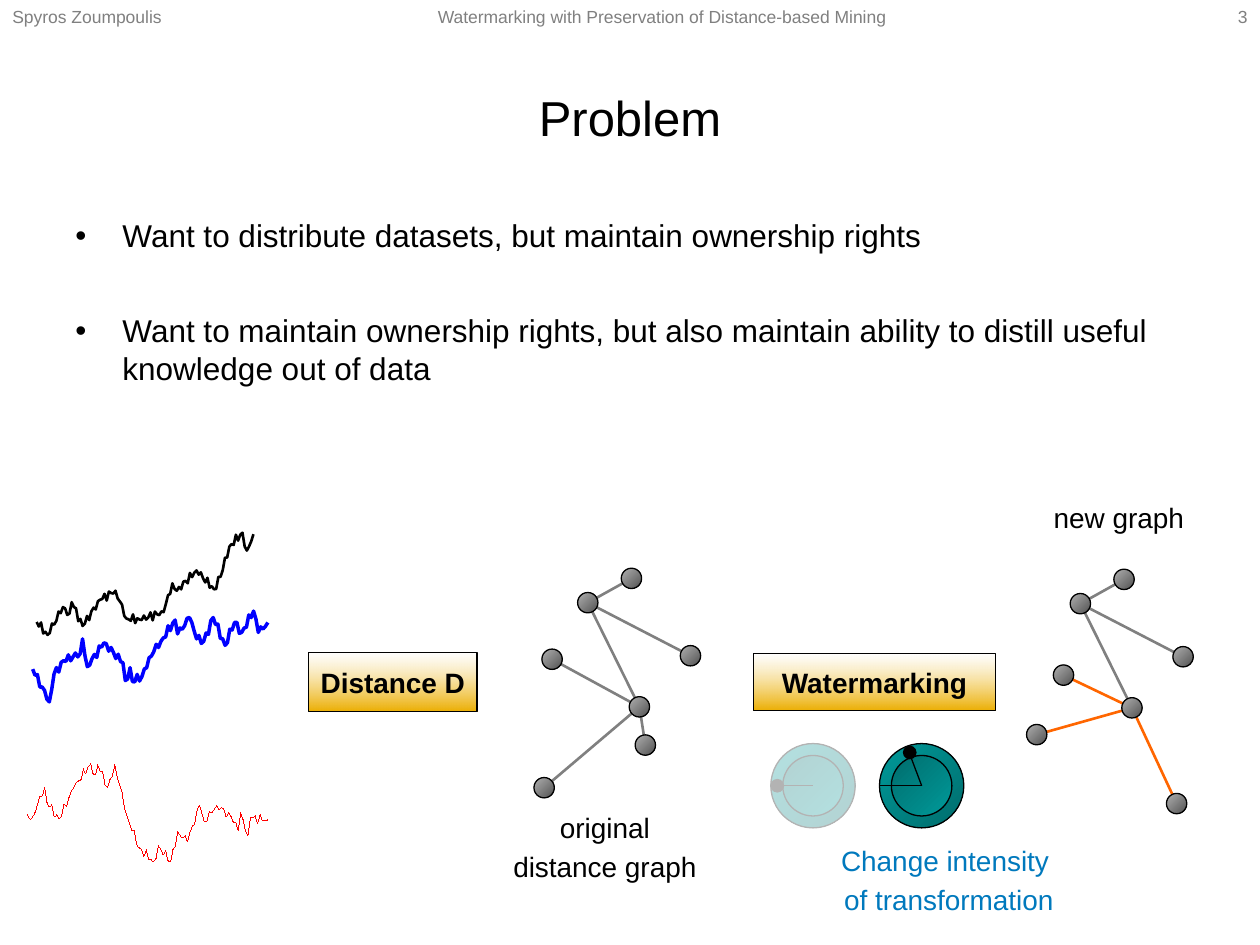
import itertools
import math

import pptx
import pptx.dml.color
import pptx.enum.shapes
import pptx.enum.text
import pptx.oxml.ns
import pptx.util
from lxml import etree

Cm, Pt = pptx.util.Cm, pptx.util.Pt
ALIGN = pptx.enum.text.PP_ALIGN
ANCHOR = pptx.enum.text.MSO_ANCHOR
SHAPE = pptx.enum.shapes.MSO_SHAPE
qn = pptx.oxml.ns.qn

COLORS = {
    "black": "000000", "white": "FFFFFF", "gray": "808080", "blue": "0000FF",
    "red": "FF0000", "gold": "ECAE00", "teal": "009999", "dark_teal": "006D6D",
    "node_light": "B2B2B2", "node_dark": "525252", "orange": "FF6600",
    "caption_blue": "0079BD",
}
FONT = "Arial"

# Turning points of each time series: (time step, cm below the top of its box)
LAST_STEP = 99
RIPPLE = 0.1
RISING_TURNS = [
    (0, 1.8), (5, 2.06), (12, 1.5), (15, 1.63), (16, 1.4), (21, 1.88), (29, 1.35), (36, 1.17),
    (41, 1.73), (47, 1.75), (58, 1.6), (62, 1.02), (64, 1.17), (73, 0.76), (81, 1.14),
    (84, 0.89), (88, 0.28), (94, 0), (96, 0.36), (99, 0.03)]
STEPPED_TURNS = [
    (0, 1.17), (7, 1.83), (9, 1.27), (13, 1), (20, 0.86), (21, 0.56), (23, 1.12), (30, 0.64),
    (38, 1.04), (39, 1.4), (41, 1.14), (42, 1.42), (46, 1.32), (49, 0.94), (54, 0.61),
    (60, 0.18), (61, 0.46), (66, 0.13), (69, 0.56), (72, 0.61), (76, 0.13), (81, 0.69),
    (85, 0.23), (88, 0.43), (93, 0), (95, 0.43), (99, 0.23)]
DIPPING_TURNS = [
    (0, 1.04), (2, 1.07), (7, 0.48), (8, 0.79), (13, 1.12), (19, 0.48), (26, 0), (28, 0.23),
    (29, 0.03), (33, 0.48), (36, 0.03), (41, 1.04), (46, 1.7), (52, 1.98), (54, 1.65),
    (59, 1.98), (62, 1.37), (66, 1.57), (71, 0.84), (73, 1.17), (78, 0.84), (84, 1.07),
    (87, 1.35), (88, 0.99), (91, 1.45), (92, 1.09), (99, 1.14)]

# Node centres in cm inside a graph's box
FIXED_NODES = {"top": (1.96, 0.2), "upper": (1.08, 0.69), "right": (3.15, 1.76),
               "hub": (2.12, 2.79)}
ORIGINAL_NODES = {"left": (0.36, 1.83), "low_left": (0.2, 4.42), "low_right": (2.24, 3.56)}
NEW_NODES = {"left": (0.74, 2.13), "low_left": (0.2, 3.33), "low_right": (3.02, 4.72)}
NODE_SIZE = 0.41


def rgb(name):
    return pptx.dml.color.RGBColor.from_string(COLORS[name])


def set_opacity(shape, percent):
    """Make the first colour of the shape's fill partly transparent."""
    color = shape._element.spPr.findall(".//" + qn("a:srgbClr"))[0]
    etree.SubElement(color, qn("a:alpha"), val=str(percent * 1000))


def style_font(paragraph, size, color, bold=False):
    paragraph.font.name = FONT
    paragraph.font.size = Pt(size)
    paragraph.font.bold = bold
    paragraph.font.color.rgb = rgb(color)


def add_text(slide, box, lines, size, color="black", align=ALIGN.LEFT,
             anchor=ANCHOR.TOP, bullet=False):
    frame = slide.shapes.add_textbox(*map(Cm, box)).text_frame
    frame.word_wrap = True
    frame.vertical_anchor = anchor
    frame.text = "\n".join(lines)
    for index, paragraph in enumerate(frame.paragraphs):
        paragraph.alignment = align
        if index:
            paragraph.space_before = Pt(3)
        style_font(paragraph, size, color)
        if bullet:
            properties = paragraph._p.get_or_add_pPr()
            properties.set("marL", str(Cm(0.95)))
            properties.set("indent", str(-Cm(0.95)))
            etree.SubElement(properties, qn("a:buFont"), typeface=FONT)
            etree.SubElement(properties, qn("a:buChar"), char="•")


def add_filled(slide, kind, box, colors, angle=315, outlined=True):
    """Add a shape with one solid colour or a two-colour gradient."""
    shape = slide.shapes.add_shape(kind, *map(Cm, box))
    shape.shadow.inherit = False
    if len(colors) == 1:
        shape.fill.solid()
        shape.fill.fore_color.rgb = rgb(colors[0])
    else:
        shape.fill.gradient()
        shape.fill.gradient_angle = angle
        for stop, color in zip(shape.fill.gradient_stops, colors):
            stop.color.rgb = rgb(color)
    if outlined:
        shape.line.color.rgb = rgb("black")
        shape.line.width = Pt(0.75)
    else:
        shape.line.fill.background()
    return shape


def add_circle(slide, center, diameter, colors):
    corner = [value - diameter / 2 for value in center]
    return add_filled(slide, SHAPE.OVAL, (*corner, diameter, diameter), colors)


def add_line(slide, start, end, color, width):
    line = slide.shapes.add_connector(
        pptx.enum.shapes.MSO_CONNECTOR.STRAIGHT, *map(Cm, (*start, *end)))
    line.line.color.rgb = rgb(color)
    line.line.width = Pt(width)
    etree.SubElement(line._element.spPr, qn("a:effectLst"))


def series_levels(turns):
    """Yield a level per step: straight between turns, plus a ripple that fades at them."""
    for (start, first), (end, last) in itertools.pairwise(turns):
        for step in range(start, end):
            share = (step - start) / (end - start)
            ripple = RIPPLE * math.sin(2.4 * step) * math.sin(math.pi * share)
            yield first + (last - first) * share + ripple
    yield turns[-1][1]


def add_series(slide, left, top, width, turns, color, line_width):
    points = [(Cm(left + width * step / LAST_STEP), Cm(top + level))
              for step, level in enumerate(series_levels(turns))]
    builder = slide.shapes.build_freeform(*points[0])
    builder.add_line_segments(points[1:], close=False)
    curve = builder.convert_to_shape()
    curve.shadow.inherit = False
    curve.fill.background()
    curve.line.color.rgb = rgb(color)
    # Written directly, so that a zero width (hairline) is kept in the file
    curve._element.spPr.get_or_add_ln().set("w", str(Pt(line_width)))


def add_step(slide, box, label):
    step = add_filled(slide, SHAPE.RECTANGLE, box, ("white", "gold"), angle=270)
    set_opacity(step, 60)
    frame = step.text_frame
    frame.word_wrap = False
    frame.vertical_anchor = ANCHOR.MIDDLE
    frame.text = label
    frame.paragraphs[0].alignment = ALIGN.CENTER
    style_font(frame.paragraphs[0], 16, "black", bold=True)


def add_graph(slide, left, top, moved_nodes, moved_color):
    nodes = {name: (left + x, top + y)
             for name, (x, y) in (FIXED_NODES | moved_nodes).items()}
    for name in moved_nodes:
        add_line(slide, nodes[name], nodes["hub"], moved_color, 1.5)
    for name in ("hub", "top", "right"):
        add_line(slide, nodes["upper"], nodes[name], "gray", 1.5)
    for center in nodes.values():
        add_circle(slide, center, NODE_SIZE, ("node_light", "node_dark"))


def add_dial(slide, left, top, hand_tips, knob):
    size = 1.7
    center = (left + size / 2, top + size / 2)
    add_circle(slide, center, size, ("teal", "dark_teal"))
    add_circle(slide, center, 1.22, ("dark_teal", "teal"))
    for x, y in hand_tips:
        add_line(slide, (left + x, top + y), center, "black", 0.75)
    add_circle(slide, (left + knob[0], top + knob[1]), 0.25, ("black",))


def add_header(slide, width):
    add_text(slide, (0, 0, 3.81, 0.69), ["Spyros Zoumpoulis"], 10, "gray")
    add_text(slide, (5.72, 0, 15.24, 0.69),
             ["Watermarking with Preservation of Distance-based Mining"], 10, "gray", ALIGN.CENTER)
    add_text(slide, (width - 1.27, 0, 1.27, 0.64), ["3"], 10, "gray", ALIGN.RIGHT)


def add_statement(slide, left, width):
    add_text(slide, (left, 0.76, width, 3.18), ["Problem"], 28,
             align=ALIGN.CENTER, anchor=ANCHOR.MIDDLE)
    add_text(slide, (left, 4.24, width, 1.27),
             ["Want to distribute datasets, but maintain ownership rights"], 18, bullet=True)
    add_text(slide, (left, 6.15, width, 3.18),
             ["Want to maintain ownership rights, but also maintain ability to distill useful "
              "knowledge out of data"], 18, bullet=True)


def add_process(slide):
    add_series(slide, 0.74, 10.74, 4.37, RISING_TURNS, "black", 1.5)
    add_series(slide, 0.66, 12.32, 4.74, STEPPED_TURNS, "blue", 2)
    add_series(slide, 0.56, 15.39, 4.83, DIPPING_TURNS, "red", 0)
    add_step(slide, (6.22, 13.16, 3.4, 1.19), "Distance D")
    add_graph(slide, 10.77, 11.46, ORIGINAL_NODES, "gray")
    add_step(slide, (15.19, 13.18, 4.88, 1.14), "Watermarking")
    add_graph(slide, 20.7, 11.48, NEW_NODES, "orange")
    add_dial(slide, 15.54, 14.99, [(0.08, 0.85)], (0.13, 0.85))
    veil = add_filled(slide, SHAPE.RECTANGLE, (14.86, 14.53, 2.69, 2.79), ("white",),
                      outlined=False)
    set_opacity(veil, 70)
    add_dial(slide, 17.73, 14.99, [(0, 0.85), (0.56, 0.08)], (0.61, 0.18))
    for box, lines, color in (
            ((9.58, 16.21, 5.23, 1.19), ["original", "distance graph"], "black"),
            ((15.98, 16.89, 6.3, 1.19), ["Change intensity ", "of transformation"],
             "caption_blue"),
            ((19.94, 9.96, 5.23, 1.19), ["new graph"], "black")):
        add_text(slide, box, lines, 16, color, ALIGN.CENTER)


def main():
    presentation = pptx.Presentation()
    presentation.slide_width, presentation.slide_height = Cm(25.4), Cm(19.05)
    slide = presentation.slides.add_slide(presentation.slide_layouts[6])
    add_header(slide, 25.4)
    add_statement(slide, 1.27, 22.86)
    add_process(slide)
    presentation.save("out.pptx")


if __name__ == "__main__":
    main()
